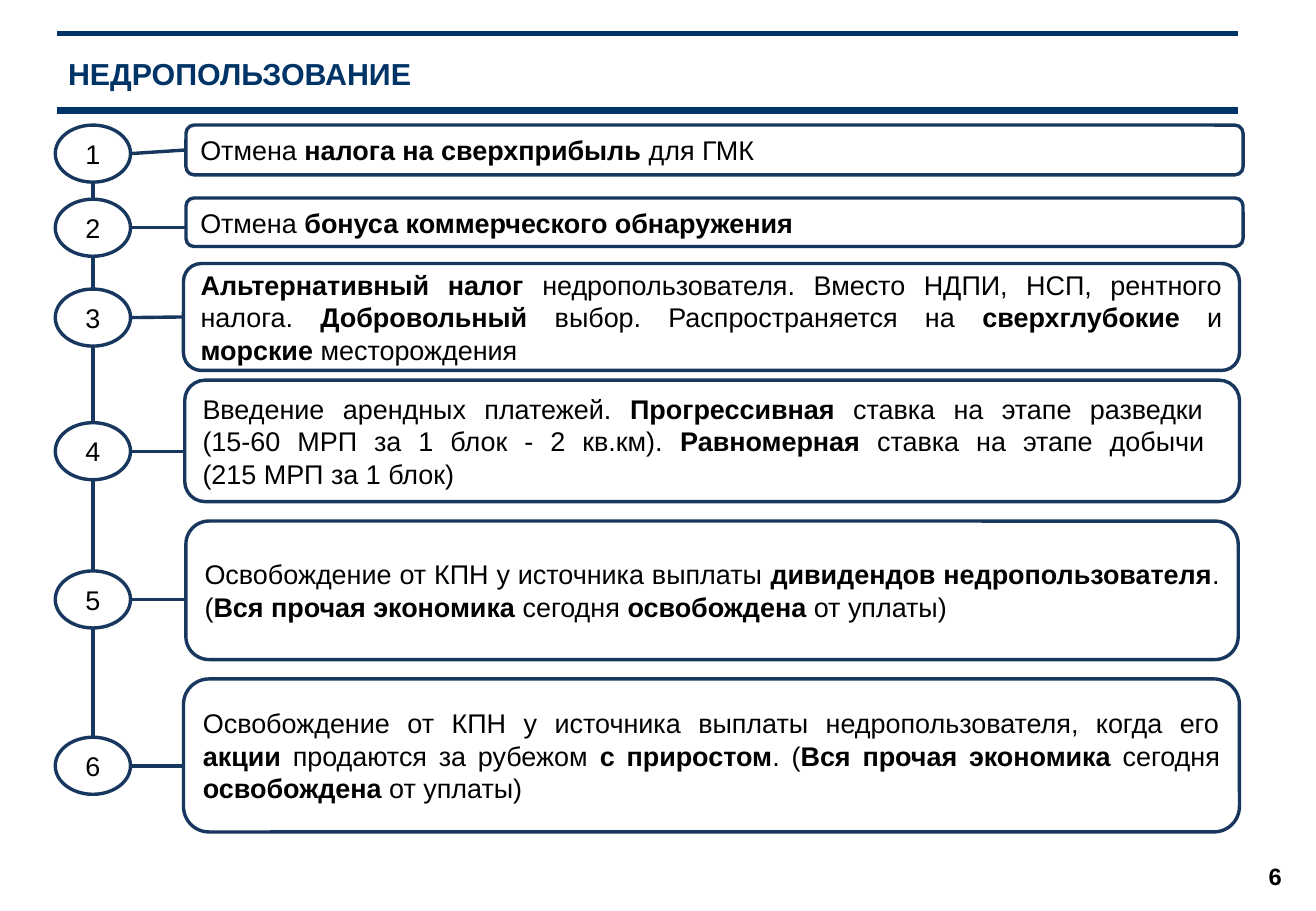
from dataclasses import dataclass
from lxml.etree import SubElement
from pptx import Presentation
from pptx.dml.color import RGBColor
from pptx.enum.shapes import MSO_CONNECTOR, MSO_SHAPE
from pptx.enum.text import MSO_ANCHOR, PP_ALIGN
from pptx.oxml.ns import qn
from pptx.util import Inches, Pt

# Content: bold wording stands between asterisks
TITLE = "НЕДРОПОЛЬЗОВАНИЕ"
PAGE = "6"
# Places are percent of the slide: badge top, then box left, top, width, height
ITEMS = [
    ("Отмена *налога на сверхприбыль* для ГМК",
     13.73, (14.13, 13.73, 80.33, 5.47)),
    ("Отмена *бонуса коммерческого обнаружения*",
     21.87, (14.13, 21.73, 80.33, 5.33)),
    ("*Альтернативный налог* недропользователя. Вместо НДПИ, НСП, рентного "
     "налога. *Добровольный* выбор. Распространяется на *сверхглубокие* и "
     "*морские* месторождения",
     31.73, (13.94, 28.93, 80.24, 11.73)),
    ("Введение арендных платежей. *Прогрессивная* ставка на этапе разведки \n"
     "(15-60 МРП за 1 блок - 2 кв.км). *Равномерная* ставка на этапе добычи \n"
     "(215 МРП за 1 блок)",
     46.4, (14.04, 41.73, 80.15, 13.33)),
    ("Освобождение от КПН у источника выплаты *дивидендов недропользователя*. "
     "(*Вся прочая экономика* сегодня *освобождена* от уплаты)",
     62.67, (14.13, 57.2, 79.96, 15.2)),
    ("Освобождение от КПН у источника выплаты недропользователя, когда его "
     "*акции* продаются за рубежом *с приростом*. "
     "(*Вся прочая экономика* сегодня *освобождена* от уплаты)",
     80.93, (13.94, 74.53, 80.24, 16.8)),
]
BADGE = (4.2, 5.72, 6.27)  # left, width, height
RULES = [(3.73, 3), (12.13, 4.5)]  # height on the slide, weight


@dataclass(frozen=True)
class Theme:
    font: str = "Arial"
    head: RGBColor = RGBColor(0x00, 0x33, 0x66)
    edge: RGBColor = RGBColor(0x17, 0x37, 0x5E)
    ink: RGBColor = RGBColor(0, 0, 0)
    paper: RGBColor = RGBColor(255, 255, 255)
    big: int = 18
    body: int = 16
    small: int = 14
    line: int = 2


T = Theme()
deck = Presentation()
deck.slide_width, deck.slide_height = Inches(10.83), Inches(7.5)
slide = deck.slides.add_slide(deck.slide_layouts[5])
shapes = slide.shapes


def px(share):
    return round(deck.slide_width * share / 100)


def py(share):
    return round(deck.slide_height * share / 100)


def place(x, y, w, h):
    return px(x), py(y), px(w), py(h)


def write(shape, text, size, align, color=T.ink, bold=False):
    frame = shape.text_frame
    frame.word_wrap = True
    frame.vertical_anchor = MSO_ANCHOR.MIDDLE
    para = frame.paragraphs[0]
    para.alignment = align
    for i, part in enumerate(text.split("*")):
        for j, piece in enumerate(part.split("\n")):
            if j:
                para.add_line_break()
            if piece:
                run = para.add_run()
                run.text = piece
                font = run.font
                font.name, font.size = T.font, Pt(size)
                font.bold = bold or i % 2 == 1
                font.color.rgb = color


def draw(kind, spot, text, align, size=T.body, edge=True, bold=False):
    shape = shapes.add_shape(kind, *place(*spot))
    shape.shadow.inherit = False
    shape.fill.solid()
    shape.fill.fore_color.rgb = T.paper
    if edge:
        shape.line.color.rgb = T.edge
        shape.line.width = Pt(T.line)
    else:
        shape.line.fill.background()
    write(shape, text, size, align, bold=bold)
    return shape


def link(x1, y1, x2, y2, color=T.edge, weight=T.line):
    line = shapes.add_connector(
        MSO_CONNECTOR.STRAIGHT, px(x1), py(y1), px(x2), py(y2))
    line.line.color.rgb = color
    line.line.width = Pt(weight)
    SubElement(line._element.spPr, qn("a:effectLst"))
    return line


# Header and page number
for y, weight in RULES:
    link(4.34, y, 94.09, y, T.head, weight)
draw(MSO_SHAPE.RECTANGLE, (93.91, 92.53, 6, 7.33), PAGE, PP_ALIGN.CENTER,
     T.small, edge=False, bold=True)
title = shapes.title
title.left, title.top, title.width, title.height = place(4.25, 3.87, 90.21, 8.4)
write(title, TITLE, T.big, PP_ALIGN.LEFT, T.head, True)

# Spine behind the badges
left, wide, high = BADGE
mid = left + wide / 2
link(mid, ITEMS[0][1] + high, mid, ITEMS[-1][1])

# Numbered rows
for num, (text, top, spot) in enumerate(ITEMS, 1):
    box = draw(MSO_SHAPE.ROUNDED_RECTANGLE, spot, text, PP_ALIGN.JUSTIFY)
    draw(MSO_SHAPE.OVAL, (left, top, wide, high), str(num), PP_ALIGN.CENTER)
    y = top + high / 2
    arm = link(left + wide, y, spot[0], y)
    if abs(spot[1] + spot[3] / 2 - y) < 0.5:
        arm.end_connect(box, 1)

deck.save("out.pptx")
